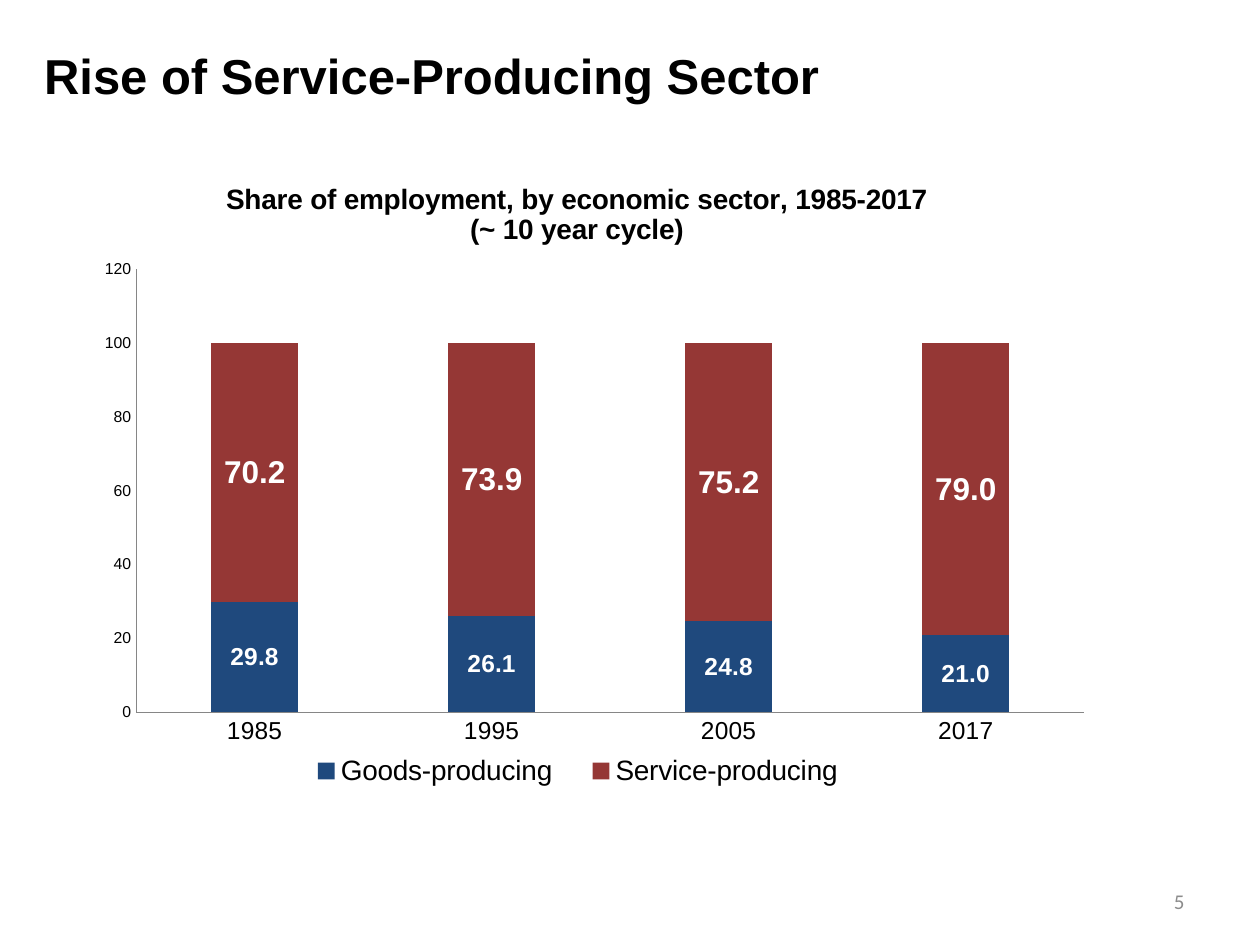
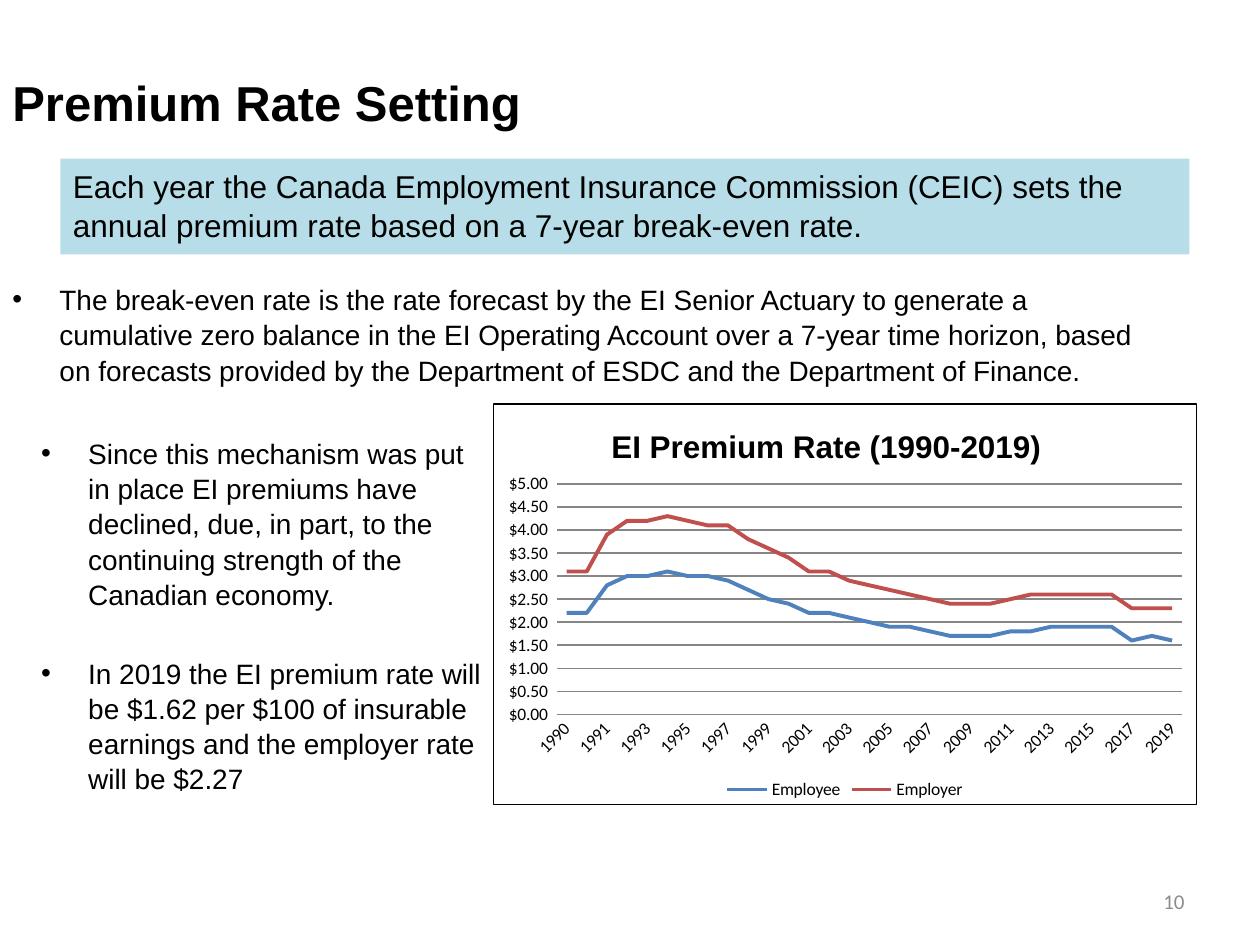
from lxml.etree import SubElement
from pptx import Presentation
from pptx.chart.data import CategoryChartData
from pptx.dml.color import RGBColor
from pptx.enum.chart import (XL_CHART_TYPE, XL_LABEL_POSITION,
                             XL_LEGEND_POSITION, XL_TICK_MARK)
from pptx.enum.shapes import MSO_SHAPE
from pptx.enum.text import MSO_ANCHOR, PP_ALIGN
from pptx.oxml import parse_xml
from pptx.oxml.ns import nsdecls, qn
from pptx.util import Cm, Pt

BLACK = RGBColor(0x00, 0x00, 0x00)
WHITE = RGBColor(0xFF, 0xFF, 0xFF)
GREY = RGBColor(0x8C, 0x8C, 0x8C)
RULE = RGBColor(0x86, 0x86, 0x86)
NAVY = RGBColor(0x1F, 0x49, 0x7D)
BRICK = RGBColor(0x95, 0x37, 0x35)
BLUE = RGBColor(0x4F, 0x81, 0xBD)
RED = RGBColor(0xC0, 0x50, 0x4D)
PALE = RGBColor(0xB7, 0xDE, 0xE8)
HEAD, BODY = "Arial", "Calibri"

YEARS = ["1990", "1991"] + [str(year) for year in range(1991, 2020)]
STAFF = [2.2, 2.2, 2.8, 3, 3, 3.1, 3, 3, 2.9, 2.7, 2.5, 2.4, 2.2, 2.2, 2.1, 2,
         1.9, 1.9, 1.8, 1.7, 1.7, 1.7, 1.8, 1.8, 1.9, 1.9, 1.9, 1.9, 1.6, 1.7, 1.6]
FIRM = [3.1, 3.1, 3.9, 4.2, 4.2, 4.3, 4.2, 4.1, 4.1, 3.8, 3.6, 3.4, 3.1, 3.1, 2.9,
        2.8, 2.7, 2.6, 2.5, 2.4, 2.4, 2.4, 2.5, 2.6, 2.6, 2.6, 2.6, 2.6, 2.3, 2.3, 2.3]


def place(box):
    return [Cm(side) for side in box]


def style(font, size, color=BLACK, bold=False, name=HEAD):
    font.size, font.bold, font.name = Pt(size), bold, name
    font.color.rgb = color


# Text regions
def add_text(slide, box, text, size, color=BLACK, bold=False, name=HEAD,
             anchor=MSO_ANCHOR.TOP, align=PP_ALIGN.LEFT):
    frame = slide.shapes.add_textbox(*place(box)).text_frame
    frame.word_wrap = True
    frame.vertical_anchor = anchor
    para = frame.paragraphs[0]
    para.text, para.alignment = text, align
    style(para.font, size, color, bold, name)


def add_title(slide, box, text, anchor=MSO_ANCHOR.TOP):
    add_text(slide, box, text, 28, bold=True, anchor=anchor)


def add_number(slide, number):
    add_text(slide, (18.21, 17.65, 5.92, 1.02), str(number), 12, GREY,
             name=BODY, anchor=MSO_ANCHOR.MIDDLE, align=PP_ALIGN.RIGHT)


def add_points(slide, box, points):
    frame = slide.shapes.add_textbox(*place(box)).text_frame
    frame.word_wrap = True
    for index, point in enumerate(points):
        para = frame.add_paragraph() if index else frame.paragraphs[0]
        para.text = point
        props = para._p.get_or_add_pPr()
        props.set("marL", str(Cm(0.95)))
        props.set("indent", str(-Cm(0.95)))
        para.line_spacing = 1.05
        if index:
            para.space_before = Pt(25)
        SubElement(props, qn("a:buFont")).set("typeface", HEAD)
        SubElement(props, qn("a:buChar")).set("char", "•")
        style(para.font, 16)


def add_banner(slide, box, text):
    shape = slide.shapes.add_shape(MSO_SHAPE.RECTANGLE, *place(box))
    shape.shadow.inherit = False
    shape.fill.solid()
    shape.fill.fore_color.rgb = PALE
    shape.line.fill.background()
    shape.text_frame.vertical_anchor = MSO_ANCHOR.TOP
    para = shape.text_frame.paragraphs[0]
    para.text, para.alignment = text, PP_ALIGN.LEFT
    para.line_spacing = 1.05
    style(para.font, 18)


# Chart regions
def set_layout(part, x, y, w=None, h=None):
    """Put a chart part at fractions of the chart's box."""
    for old in part.findall(qn("c:layout")):
        part.remove(old)
    inner = '<c:layoutTarget val="inner"/>' if part.tag == qn("c:plotArea") else ""
    modes = '<c:xMode val="edge"/><c:yMode val="edge"/>'
    sides = "".join(f'<c:{key} val="{val}"/>'
                    for key, val in zip("xywh", (x, y, w, h)) if val is not None)
    layout = parse_xml(f'<c:layout {nsdecls("c")}><c:manualLayout>{inner}{modes}'
                       f'{sides}</c:manualLayout></c:layout>')
    for tag in ("c:tx", "c:legendPos"):
        if part.find(qn(tag)) is not None:
            part.find(qn(tag)).addnext(layout)
            return
    part.insert(0, layout)


def add_chart(slide, box, kind, cats, series, title, size, spot, plot):
    data = CategoryChartData()
    data.categories = cats
    for name, vals in series:
        data.add_series(name, vals)
    chart = slide.shapes.add_chart(kind, *place(box), data).chart
    style(chart.font, 10, name=BODY)
    chart.has_title = True
    frame = chart.chart_title.text_frame
    for index, line in enumerate(title):
        para = frame.add_paragraph() if index else frame.paragraphs[0]
        para.text = line
        style(para.font, size, bold=True)
    chart.has_legend = True
    chart.legend.position = XL_LEGEND_POSITION.BOTTOM
    chart.legend.include_in_layout = False
    set_layout(chart.chart_title._element, *spot)
    set_layout(chart._chartSpace.chart.plotArea, *plot)
    for axis in (chart.category_axis, chart.value_axis):
        axis.major_tick_mark = axis.minor_tick_mark = XL_TICK_MARK.NONE
        axis.format.line.color.rgb = RULE
    return chart


def set_scale(axis, top, step, code):
    axis.minimum_scale, axis.maximum_scale, axis.major_unit = 0, top, step
    axis.tick_labels.number_format = code
    axis.tick_labels.number_format_is_linked = False


def add_shares(slide, box):
    chart = add_chart(
        slide, box, XL_CHART_TYPE.COLUMN_STACKED, ["1985", "1995", "2005", "2017"],
        [("Goods-producing", [29.8, 26.1, 24.8, 21]),
         ("Service-producing", [70.2, 73.9, 75.2, 79])],
        ["Share of employment, by economic sector, 1985-2017", "(~ 10 year cycle)"],
        16, (0.17, 0.03), (0.09, 0.17, 0.88, 0.68))
    style(chart.legend.font, 16)
    set_layout(chart.legend._element, 0.23, 0.9, 0.54, 0.08)
    style(chart.category_axis.tick_labels.font, 14)
    style(chart.value_axis.tick_labels.font, 9)
    chart.value_axis.has_major_gridlines = False
    set_scale(chart.value_axis, 120, 20, "0")
    bars = chart.plots[0]
    bars.gap_width, bars.overlap, bars.vary_by_categories = 174, 100, False
    for part, color, size in zip(bars.series, (NAVY, BRICK), (14, 18)):
        part.format.fill.solid()
        part.format.fill.fore_color.rgb = color
        labels = part.data_labels
        labels.show_value = True
        labels.number_format, labels.number_format_is_linked = "0.0", False
        labels.position = XL_LABEL_POSITION.CENTER
        style(labels.font, size, WHITE, True)


def add_rates(slide, box):
    chart = add_chart(
        slide, box, XL_CHART_TYPE.LINE, YEARS,
        [("Employee", STAFF), ("Employer", FIRM)],
        ["EI Premium Rate (1990-2019)"], 18, (0.16, 0.04), (0.09, 0.2, 0.89, 0.575))
    axis = chart.value_axis
    axis.format.line.fill.background()
    axis.major_gridlines.format.line.color.rgb = RULE
    set_scale(axis, 5, 0.5, r'"$"#,##0.00_);[Red]\("$"#,##0.00\)')
    # Slanted labels on every second year
    years = chart.category_axis
    style(years.tick_labels.font, 10, name=BODY)
    years._element.txPr.find(qn("a:bodyPr")).set("rot", "-2700000")
    skip = parse_xml(f'<c:tickLblSkip {nsdecls("c")} val="2"/>')
    years._element.find(qn("c:noMultiLvlLbl")).addprevious(skip)
    chart.plots[0].vary_by_categories = False
    for line, color in zip(chart.plots[0].series, (BLUE, RED)):
        line.smooth = False
        line.format.line.color.rgb = color
        line.format.line.width = Pt(2.25)
    # Frame around the chart
    chart._chartSpace.chart.addnext(parse_xml(
        f'<c:spPr {nsdecls("c", "a")}><a:noFill/><a:ln w="{Pt(0.75)}"><a:solidFill>'
        f'<a:srgbClr val="{BLACK}"/></a:solidFill></a:ln></c:spPr>'))


# Slides
def show_sector(slide):
    add_number(slide, 5)
    add_title(slide, (0.64, 0.79, 23.85, 1.68), "Rise of Service-Producing Sector")
    add_shares(slide, (0.79, 3.2, 21.72, 13.13))


def show_premium(slide):
    add_number(slide, 10)
    add_title(slide, (0, 0.51, 21.64, 3.1), "Premium Rate Setting", MSO_ANCHOR.MIDDLE)
    add_points(slide, (0, 5.54, 23.32, 2.49), [
        "The break-even rate is the rate forecast by the EI Senior Actuary to generate "
        "a cumulative zero balance in the EI Operating Account over a 7-year time "
        "horizon, based on forecasts provided by the Department of ESDC and the "
        "Department of Finance."])
    add_points(slide, (0.58, 8.64, 9.55, 7.09), [
        "Since this mechanism was put in place EI premiums have declined, due, in "
        "part, to the continuing strength of the Canadian economy.",
        "In 2019 the EI premium rate will be $1.62 per $100 of insurable earnings "
        "and the employer rate will be $2.27"])
    add_rates(slide, (9.93, 8.13, 14.2, 8.1))
    add_banner(slide, (1.22, 3.2, 22.76, 1.93),
               "Each year the Canada Employment Insurance Commission (CEIC) sets the "
               "annual premium rate based on a 7-year break-even rate.")


def main():
    deck = Presentation()
    deck.slide_width, deck.slide_height = Cm(25.4), Cm(19.05)
    for show in (show_sector, show_premium):
        show(deck.slides.add_slide(deck.slide_layouts[6]))
    deck.save("out.pptx")


if __name__ == "__main__":
    main()
